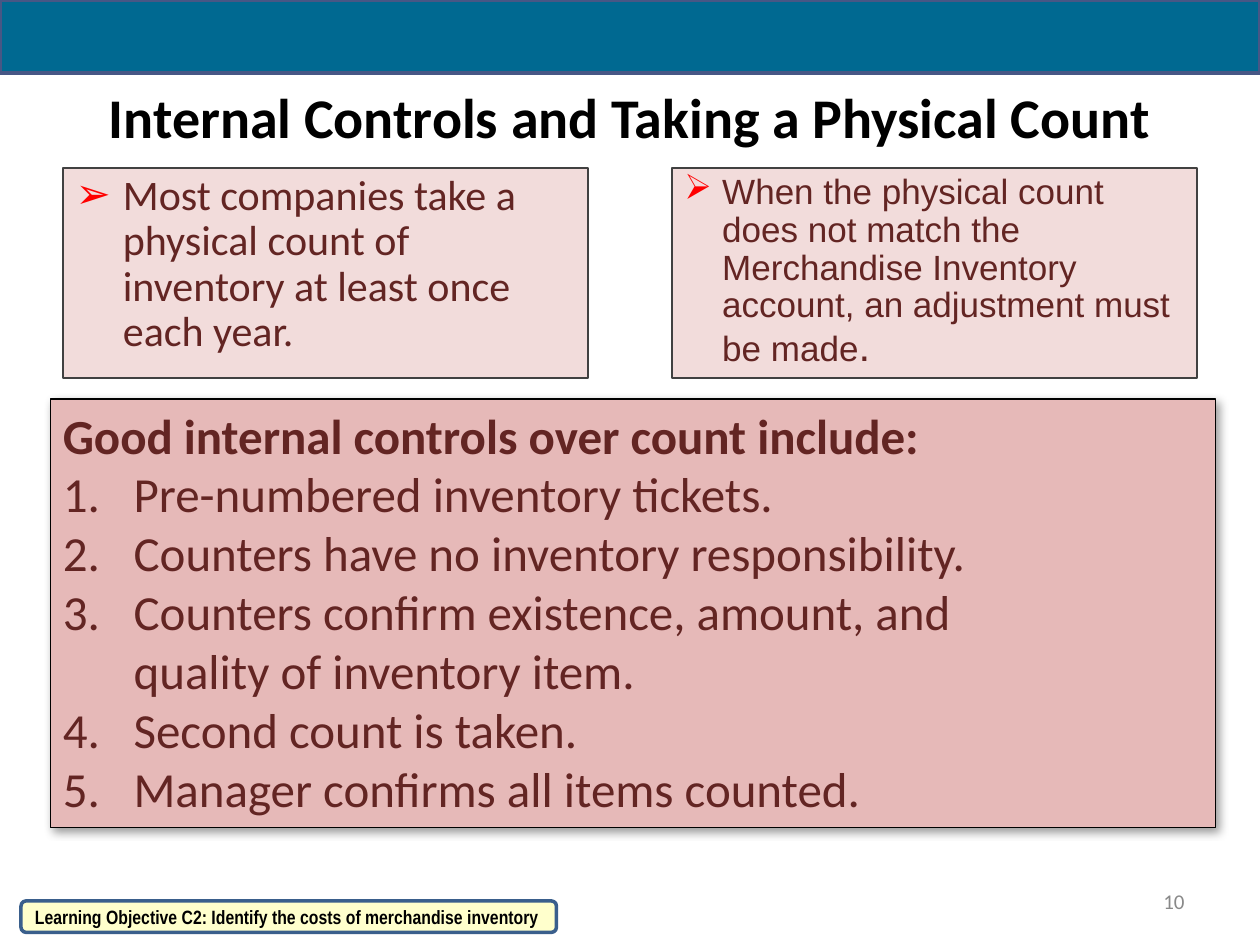
from dataclasses import dataclass

from lxml.etree import SubElement
from pptx import Presentation
from pptx.dml.color import RGBColor
from pptx.enum.shapes import MSO_SHAPE as SHAPE
from pptx.enum.text import MSO_ANCHOR as ANCHOR, MSO_AUTO_SIZE as AUTO, PP_ALIGN as ALIGN
from pptx.oxml.ns import qn
from pptx.util import Pt


@dataclass(frozen=True)
class Theme:
    black: str = "000000"
    text: str = "632523"
    bullet: str = "FF0000"
    number: str = "898989"
    bar: str = "006991"
    bar_line: str = "475785"
    card: str = "F2DCDB"
    card_line: str = "414141"
    panel: str = "E6B9B8"
    tag: str = "FFFFCC"
    tag_line: str = "3A5F8C"
    title_size: int = 32
    list_size: int = 28
    card_size: int = 24
    small_card_size: int = 20
    number_size: int = 12
    tag_size: int = 11


@dataclass(frozen=True)
class Box:
    x: float
    y: float
    w: float
    h: float

    def place(self, sp):
        sp.left, sp.top, sp.width, sp.height = map(Pt, (self.x, self.y, self.w, self.h))

    def columns(self, n, gap):
        w = (self.w - gap * (n - 1)) / n
        return [Box(self.x + i * (w + gap), self.y, w, self.h) for i in range(n)]


THEME = Theme()


def rgb(color):
    return RGBColor.from_string(color)


def style_font(r, size, color, font="Calibri", bold=False):
    r.font.size, r.font.name, r.font.bold = Pt(size), font, bold
    r.font.color.rgb = rgb(color)


def write(p, text, align=ALIGN.LEFT, **font):
    """Fill a paragraph; a vertical tab in the text is a line break."""
    p.text, p.alignment = text, align
    for r in p.runs:
        style_font(r, **font)


def add_bullet(p, indent, char=None, color=None):
    """Hang the paragraph on a bullet character, or on a number if none is given."""
    pPr = p._p.get_or_add_pPr()
    pPr.set("marL", str(Pt(indent)))
    pPr.set("indent", str(-Pt(indent)))
    if color:
        SubElement(SubElement(pPr, qn("a:buClr")), qn("a:srgbClr"), val=color)
    if char:
        SubElement(pPr, qn("a:buChar"), char=char)
    else:
        SubElement(pPr, qn("a:buAutoNum"), type="arabicPeriod")


def style_box(sp, fill, line, width):
    sp.fill.solid()
    sp.fill.fore_color.rgb = rgb(fill)
    sp.line.color.rgb = rgb(line)
    sp.line.width = Pt(width)


def add_box(slide, box, fill, line, width, kind=SHAPE.RECTANGLE):
    sp = slide.shapes.add_shape(kind, 0, 0, 0, 0)
    box.place(sp)
    style_box(sp, fill, line, width)
    sp.shadow.inherit = False
    sp.text_frame.word_wrap = True
    return sp


def add_shadow(sp, blur, dist, angle, alpha):
    effects = sp._element.spPr.find(qn("a:effectLst"))
    shadow = SubElement(effects, qn("a:outerShdw"), blurRad=str(Pt(blur)), dist=str(Pt(dist)),
                        dir=str(angle * 60000), algn="tl", rotWithShape="0")
    color = SubElement(shadow, qn("a:srgbClr"), val=THEME.black)
    SubElement(color, qn("a:alpha"), val=str(alpha * 1000))


def fill_card(sp, text, size, indent, before, font):
    tf = sp.text_frame
    tf.auto_size, tf.vertical_anchor = AUTO.NONE, ANCHOR.TOP
    p = tf.paragraphs[0]
    write(p, text, size=size, color=THEME.text, font=font)
    p.line_spacing, p.space_before = 0.9, Pt(before)
    add_bullet(p, indent, "➢", THEME.bullet)
    return p


def add_cards(slide, box):
    left, right = box.columns(2, gap=48)
    # Left card: the body placeholder
    sp = slide.placeholders[1]
    left.place(sp)
    style_box(sp, THEME.card, THEME.card_line, 1)
    fill_card(sp, "Most companies take a physical count of inventory at least once each year.",
              THEME.card_size, indent=27, before=4.8, font="Calibri")
    # Right card, with a larger full stop
    sp = add_box(slide, right, THEME.card, THEME.card_line, 1)
    p = fill_card(sp, "When the physical count does not match the Merchandise Inventory "
                  "account, an adjustment must be made",
                  THEME.small_card_size, indent=21.6, before=6, font="Arial")
    r = p.add_run()
    r.text = "."
    style_font(r, THEME.card_size, THEME.text, "Arial")


def add_title(slide, box, text):
    sp = slide.shapes.title
    box.place(sp)
    tf = sp.text_frame
    tf.auto_size, tf.vertical_anchor = AUTO.NONE, ANCHOR.MIDDLE
    write(tf.paragraphs[0], text, ALIGN.CENTER,
          size=THEME.title_size, color=THEME.black, bold=True)


def add_controls(slide, box, heading, items):
    sp = add_box(slide, box, THEME.panel, THEME.black, 0.75)
    add_shadow(sp, blur=5, dist=3, angle=45, alpha=40)
    tf = sp.text_frame
    tf.auto_size, tf.vertical_anchor = AUTO.SHAPE_TO_FIT_TEXT, ANCHOR.TOP
    font = dict(size=THEME.list_size, color=THEME.text)
    write(tf.paragraphs[0], heading, bold=True, **font)
    for item in items:
        p = tf.add_paragraph()
        write(p, item, **font)
        add_bullet(p, indent=40.5)


def add_footer(slide, box, objective, number):
    # Slide number, at the right
    sp = slide.shapes.add_textbox(0, 0, 0, 0)
    Box(box.x + box.w - 168, box.y, 168, 28.8).place(sp)
    tf = sp.text_frame
    tf.word_wrap, tf.vertical_anchor = True, ANCHOR.MIDDLE
    write(tf.paragraphs[0], number, ALIGN.RIGHT, size=THEME.number_size, color=THEME.number)
    # Learning objective tag, at the bottom left
    tag = Box(box.x, box.y + box.h - 18, 306, 18)
    sp = add_box(slide, tag, THEME.tag, THEME.tag_line, 2, SHAPE.ROUNDED_RECTANGLE)
    tf = sp.text_frame
    tf.vertical_anchor = ANCHOR.MIDDLE
    write(tf.paragraphs[0], objective, size=THEME.tag_size, color=THEME.black,
          font="Arial Narrow", bold=True)


def main():
    prs = Presentation()
    prs.slide_width, prs.slide_height = Pt(720), Pt(540)
    slide = prs.slides.add_slide(prs.slide_layouts[1])
    add_title(slide, Box(36, 21.6, 648, 90), "Internal Controls and Taking a Physical Count")
    add_cards(slide, Box(36, 96, 648, 120))
    add_controls(slide, Box(28.8, 228, 666, 244.8),
                 "Good internal controls over count include:",
                 ["Pre-numbered inventory tickets.",
                  "Counters have no inventory responsibility.",
                  "Counters confirm existence, amount, and\vquality of inventory item.",
                  "Second count is taken.",
                  "Manager confirms all items counted."])
    # Top bar
    add_box(slide, Box(0, 0, 720, 42), THEME.bar, THEME.bar_line, 2.25)
    add_footer(slide, Box(12, 500.4, 672, 32.4),
               "Learning Objective C2: Identify the costs of merchandise inventory", "10")
    prs.save("out.pptx")


if __name__ == "__main__":
    main()
